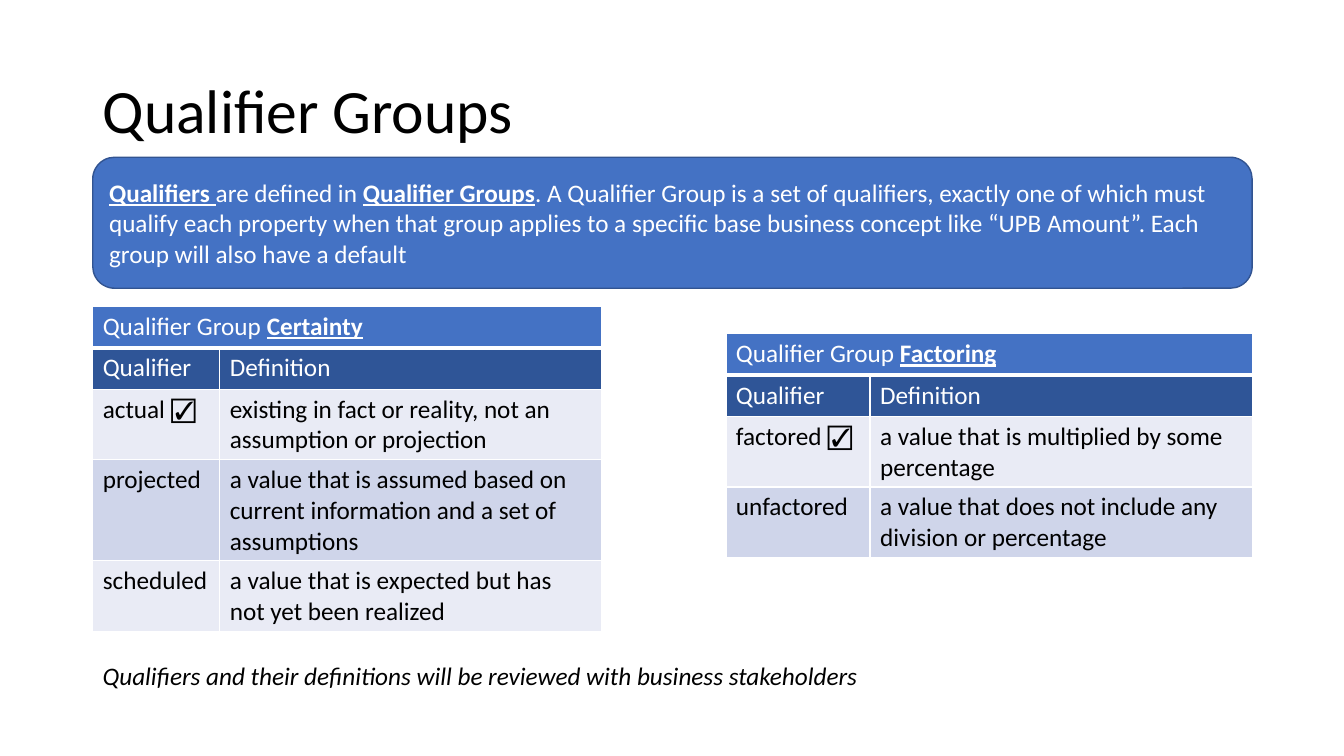
from lxml import etree
from pptx import Presentation
from pptx.dml.color import RGBColor
from pptx.enum.shapes import MSO_SHAPE
from pptx.enum.text import MSO_ANCHOR, MSO_AUTO_SIZE, PP_ALIGN
from pptx.oxml.ns import qn
from pptx.util import Inches, Pt

BANNER = MSO_SHAPE.FLOWCHART_ALTERNATE_PROCESS
LEFT, MIDDLE, FIT = PP_ALIGN.LEFT, MSO_ANCHOR.MIDDLE, MSO_AUTO_SIZE.SHAPE_TO_FIT_TEXT
COLORS = {
    "black": "000000", "white": "FFFFFF", "blue": "4472C4", "outline": "325491",
    "dark": "2F5597", "light": "E9EBF5", "band": "CFD5EA",
}
STRONG = {"bold": True, "underline": True}
CHECK = ("☑", {"name": "Roboto"})
MARGIN, CONTENT = 6.9, 86.27
DEFINITION_WIDTH, ROW_HEIGHT = 28.43, 5.47


class QualifierSlide:
    """Draws styled elements on one slide, with lengths in percent of its size."""

    def __init__(self, presentation):
        self.width, self.height = presentation.slide_width, presentation.slide_height
        self.slide = presentation.slides.add_slide(presentation.slide_layouts[6])

    def across(self, share):
        return round(self.width * share / 100)

    def down(self, share):
        return round(self.height * share / 100)

    def place(self, left, top, width, height):
        return self.across(left), self.down(top), self.across(width), self.down(height)

    def add_runs(self, frame, runs, color="black", spacing=None, **style):
        paragraph = frame.paragraphs[0]
        paragraph.alignment, paragraph.line_spacing = LEFT, spacing
        for text, changes in runs:
            run = paragraph.add_run()
            run.text = text
            values = {"name": "Calibri", "size": Pt(18), **style, **changes}
            for attribute, value in values.items():
                setattr(run.font, attribute, value)
            run.font.color.rgb = RGBColor.from_string(COLORS[color])

    def text(self, box, runs, frame_format, **style):
        frame = self.slide.shapes.add_textbox(*self.place(*box)).text_frame
        for attribute, value in frame_format.items():
            setattr(frame, attribute, value)
        self.add_runs(frame, runs, **style)

    def banner(self, box, runs):
        shape = self.slide.shapes.add_shape(BANNER, *self.place(*box))
        shape.shadow.inherit = False
        shape.fill.solid()
        shape.fill.fore_color.rgb = RGBColor.from_string(COLORS["blue"])
        shape.line.color.rgb = RGBColor.from_string(COLORS["outline"])
        shape.line.width = Pt(1)
        shape.text_frame.word_wrap = True
        shape.text_frame.vertical_anchor = MIDDLE
        self.add_runs(shape.text_frame, runs, "white")

    def style_cell(self, cell, fill, borders):
        properties = cell._tc.get_or_add_tcPr()
        for side in ("L", "R", "T", "B"):
            width = Pt(borders.get(side, 1))
            line = etree.SubElement(properties, qn(f"a:ln{side}"), w=str(width))
            solid = etree.SubElement(line, qn("a:solidFill"))
            etree.SubElement(solid, qn("a:srgbClr"), val=COLORS["white"])
        cell.fill.solid()
        cell.fill.fore_color.rgb = RGBColor.from_string(COLORS[fill])

    def group_table(self, left, top, name_width, group, qualifiers):
        rows = [
            [[("Qualifier Group ", {}), (group, STRONG)], []],
            [[("Qualifier", {})], [("Definition", {})]],
            *[[names, [(definition, {})]] for names, definition in qualifiers],
        ]
        widths = [name_width, DEFINITION_WIDTH]
        box = self.place(left, top, sum(widths), ROW_HEIGHT * len(rows))
        table = self.slide.shapes.add_table(len(rows), len(widths), *box).table
        table.first_row = table.horz_banding = False
        for column, width in zip(table.columns, widths):
            column.width = self.across(width)
        fills = ["blue", "dark"] + [("light", "band")[i % 2] for i in range(len(qualifiers))]
        borders = [{"B": 3}, {"T": 3}] + [{}] * len(qualifiers)
        for index, row in enumerate(rows):
            table.rows[index].height = self.down(ROW_HEIGHT)
            for cell, runs in zip(table.rows[index].cells, row):
                self.style_cell(cell, fills[index], borders[index])
                self.add_runs(cell.text_frame, runs, "white" if index < 2 else "black")
        table.cell(0, 0).merge(table.cell(0, 1))


def main():
    presentation = Presentation()
    presentation.slide_width, presentation.slide_height = Inches(13.33), Inches(7.5)
    page = QualifierSlide(presentation)
    page.text((MARGIN, 5.33, CONTENT, 19.33), [("Qualifier Groups", {})],
              {"word_wrap": True, "vertical_anchor": MIDDLE}, size=Pt(44), spacing=0.9)
    page.banner((MARGIN, 20.8, CONTENT, 17.33), [
        ("Qualifiers ", STRONG),
        ("are defined in ", {}),
        ("Qualifier Groups", STRONG),
        (". A Qualifier Group is a set of qualifiers, exactly one of which must qualify "
         "each property when that group applies to a specific base business concept like "
         "“UPB Amount”. Each group will also have a default", {}),
    ])
    page.group_table(MARGIN, 40.53, 9.45, "Certainty", [
        ([("actual ", {}), CHECK],
         "existing in fact or reality, not an assumption or projection"),
        ([("projected", {})],
         "a value that is assumed based on current information and a set of assumptions"),
        ([("scheduled", {})], "a value that is expected but has not yet been realized"),
    ])
    factoring_width = 10.73
    factoring_left = MARGIN + CONTENT - factoring_width - DEFINITION_WIDTH
    page.group_table(factoring_left, 44.13, factoring_width, "Factoring", [
        ([("factored ", {}), CHECK], "a value that is multiplied by some percentage"),
        ([("unfactored", {})], "a value that does not include any division or percentage"),
    ])
    page.text((MARGIN, 86.67, 57.83, 5.33), [
        ("Qualifiers and their definitions will be reviewed with business stakeholders", {}),
    ], {"word_wrap": False, "auto_size": FIT}, italic=True)
    presentation.save("out.pptx")


if __name__ == "__main__":
    main()
